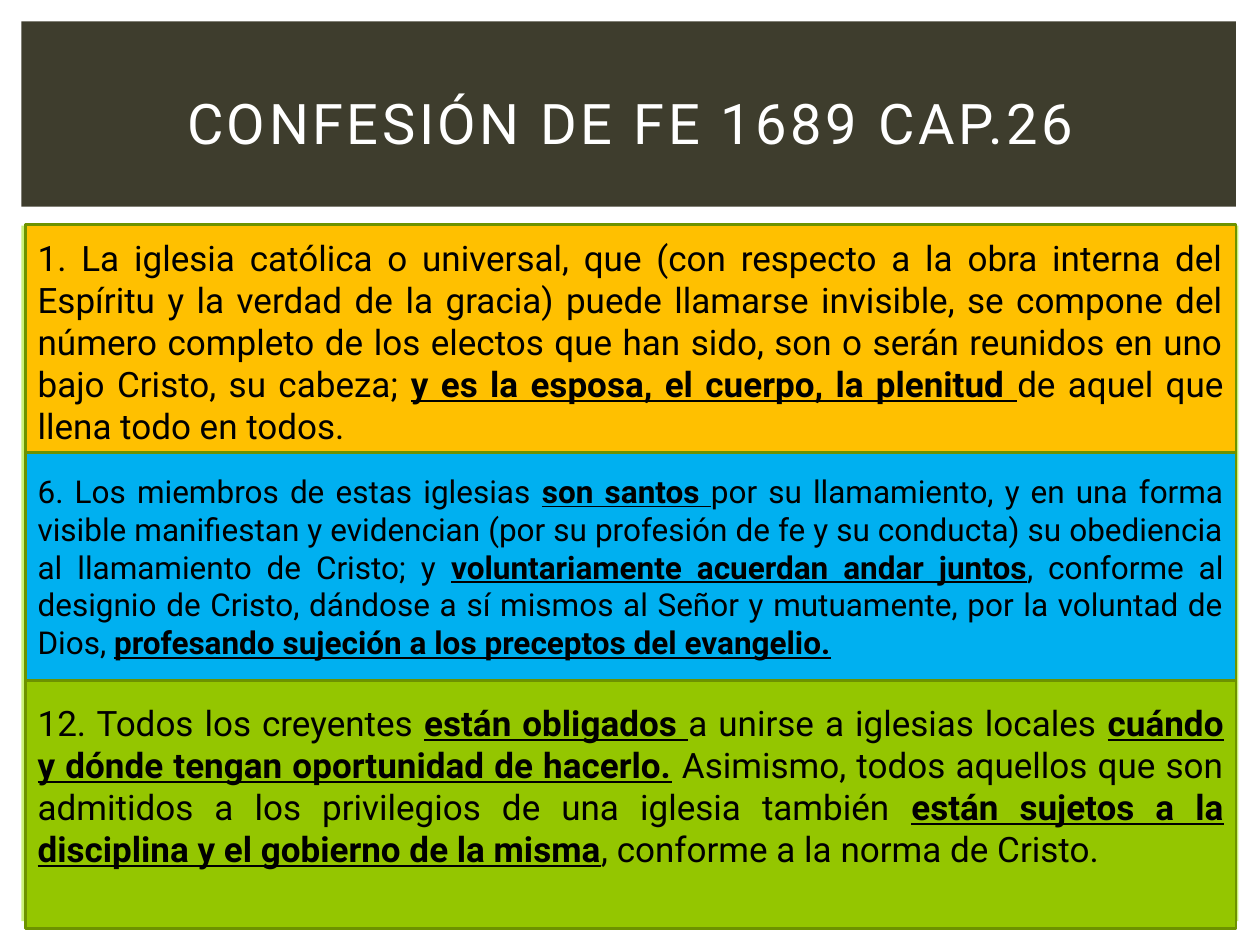
from dataclasses import dataclass

from pptx import Presentation, util as u
from pptx.dml.color import RGBColor
from pptx.enum import shapes, text


@dataclass(frozen=True)
class Theme:
    """Colours, font and type sizes of the slide."""
    font: str = "Roboto"
    header: str = "3E3D2D"
    backdrop: str = "CAF278"
    border: str = "6D9200"
    amber: str = "FFC000"
    blue: str = "00B0F0"
    green: str = "94C600"
    light: str = "FFFFFF"
    dark: str = "000000"
    title: int = 32
    large: int = 20
    small: int = 18
    tracking: int = 200
    line: float = 1.5


class Deck:
    """Draws elements on a grid of 100 columns and 75 rows."""

    def __init__(self, theme):
        """Open a presentation with one title-only slide."""
        self.theme = theme
        self.prs = Presentation()
        self.prs.slide_width, self.prs.slide_height = u.Inches(10), u.Inches(7.5)
        self.s = self.prs.slides.add_slide(self.prs.slide_layouts[5])

    def box(self, col, row, cols, rows):
        """Turn grid units into left, top, width and height."""
        x, y = self.prs.slide_width / 100, self.prs.slide_height / 75
        return [round(v) for v in (col * x, row * y, cols * x, rows * y)]

    def run(self, p, words, size, color, strong=False):
        """Add one styled run to a paragraph."""
        r = p.add_run()
        r.text = words
        r.font.name, r.font.size = self.theme.font, u.Pt(size)
        r.font.bold = r.font.underline = strong
        r.font.color.rgb = RGBColor.from_string(color)
        return r

    def band(self, cell, fill):
        """Draw a plain filled rectangle."""
        sp = self.s.shapes.add_shape(shapes.MSO_SHAPE.RECTANGLE, *self.box(*cell))
        sp.shadow.inherit = False
        sp.fill.solid()
        sp.fill.fore_color.rgb = RGBColor.from_string(fill)
        sp.line.fill.background()
        return sp

    def title(self, cell, words):
        """Place and format the title placeholder above the bands."""
        sp = self.s.shapes.title
        sp.left, sp.top, sp.width, sp.height = self.box(*cell)
        self.s.shapes._spTree.append(sp._element)
        tf = sp.text_frame
        tf.vertical_anchor = text.MSO_ANCHOR.MIDDLE
        p = tf.paragraphs[0]
        p.alignment = text.PP_ALIGN.CENTER
        r = self.run(p, words, self.theme.title, self.theme.light)
        r.font._element.set("spc", str(self.theme.tracking))

    def panel(self, cell, fill, size, parts, bottom=0.05):
        """Draw a bordered panel whose every second part is emphasised."""
        sp = self.band(cell, fill)
        sp.line.color.rgb = RGBColor.from_string(self.theme.border)
        sp.line.width = u.Pt(self.theme.line)
        tf = sp.text_frame
        tf.word_wrap = True
        tf.vertical_anchor = text.MSO_ANCHOR.MIDDLE
        tf.margin_bottom = u.Inches(bottom)
        p = tf.paragraphs[0]
        p.alignment = text.PP_ALIGN.JUSTIFY
        for i, words in enumerate(parts):
            self.run(p, words, size, self.theme.dark, strong=i % 2 == 1)


def main():
    """Build and save the slide."""
    t = Theme()
    deck = Deck(t)
    deck.band((1.7, 17.9, 96.6, 55.2), t.backdrop)
    deck.band((1.7, 1.7, 96.4, 14.7), t.header)
    deck.title((4.2, 3.9, 91.7, 11.5), "CONFESIÓN DE FE 1689 CAP.26")

    panels = [
        (18.1, t.amber, t.large, 0, [
            "1. La iglesia católica o universal, que (con respecto a la obra interna del "
            "Espíritu y la verdad de la gracia) puede llamarse invisible, se compone del "
            "número completo de los electos que han sido, son o serán reunidos en uno "
            "bajo Cristo, su cabeza; ",
            "y es la esposa, el cuerpo, la plenitud ",
            "de aquel que llena todo en todos."]),
        (18.1, t.blue, t.small, 0.05, [
            "6. Los miembros de estas iglesias ",
            "son santos ",
            "por su llamamiento, y en una forma visible manifiestan y evidencian (por su "
            "profesión de fe y su conducta) su obediencia al llamamiento de Cristo; y ",
            "voluntariamente acuerdan andar juntos",
            ", conforme al designio de Cristo, dándose a sí mismos al Señor y mutuamente, "
            "por la voluntad de Dios, ",
            "profesando sujeción a los preceptos del evangelio."]),
        (19.7, t.green, t.large, 0.35, [
            "12. Todos los creyentes ",
            "están obligados ",
            "a unirse a iglesias locales ",
            "cuándo y dónde tengan oportunidad de hacerlo.",
            " Asimismo, todos aquellos que son admitidos a los privilegios de una iglesia "
            "también ",
            "están sujetos a la disciplina y el gobierno de la misma",
            ", conforme a la norma de Cristo."]),
    ]
    row = 17.8
    for rows, fill, size, bottom, parts in panels:
        deck.panel((2, row, 96.1, rows), fill, size, parts, bottom)
        row += rows
    deck.prs.save("out.pptx")


if __name__ == "__main__":
    main()
